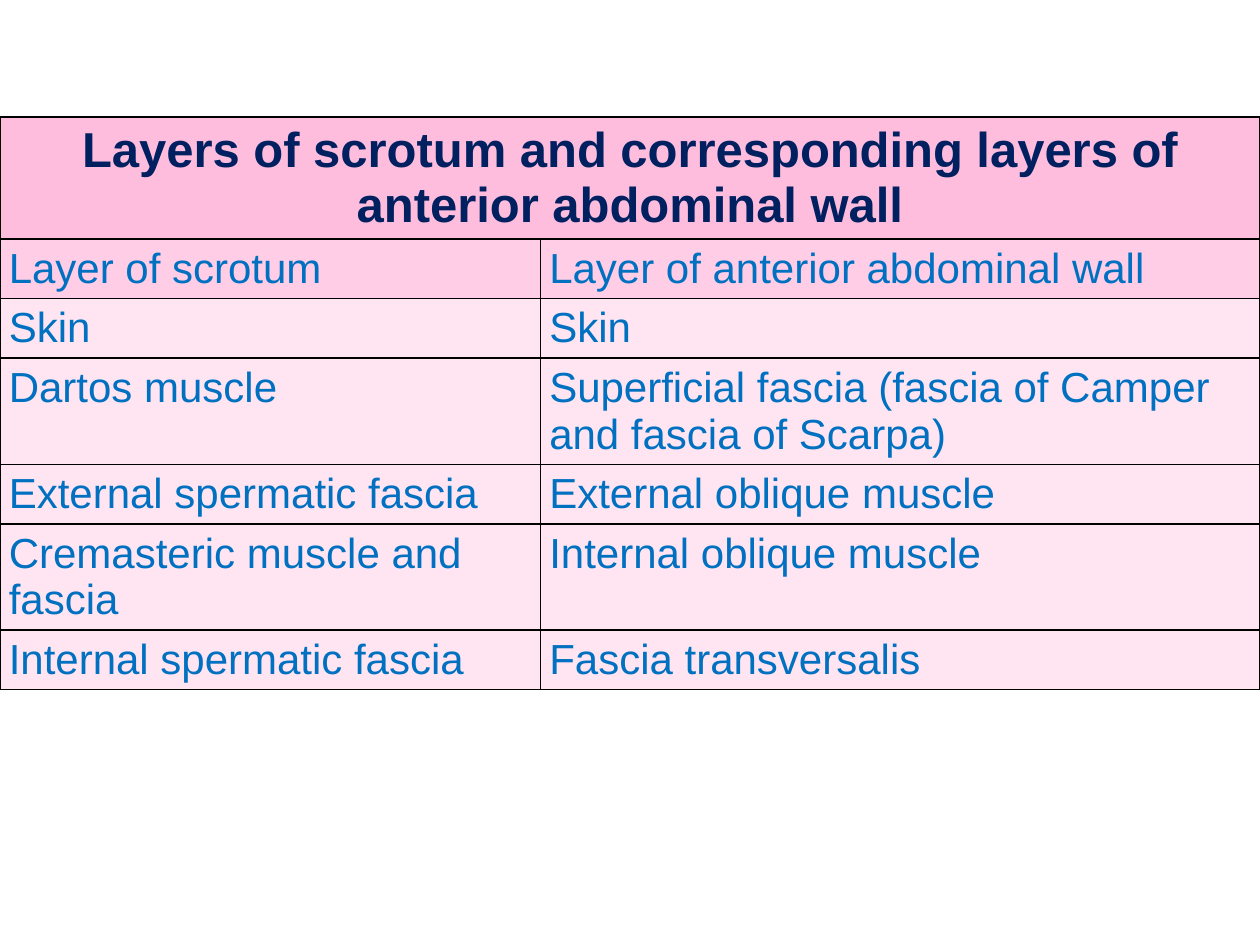
from lxml import etree
from pptx import Presentation
from pptx import util as u
from pptx.dml.color import RGBColor
from pptx.enum import text
from pptx.oxml import ns

NAVY = RGBColor(0x00, 0x20, 0x60)
BLUE = RGBColor(0x00, 0x70, 0xC0)
BLACK = RGBColor(0x00, 0x00, 0x00)
PINK = RGBColor(0xFF, 0xBD, 0xDE)
MID_PINK = RGBColor(0xFF, 0xCD, 0xE6)
PALE_PINK = RGBColor(0xFF, 0xE5, 0xF2)

HEADING = "Layers of scrotum and corresponding layers of anterior abdominal wall"
LAYERS = [
    ("Layer of scrotum", "Layer of anterior abdominal wall"),
    ("Skin", "Skin"),
    ("Dartos muscle", "Superficial fascia (fascia of Camper and fascia of Scarpa)"),
    ("External spermatic fascia", "External oblique muscle"),
    ("Cremasteric muscle and fascia", "Internal oblique muscle"),
    ("Internal spermatic fascia", "Fascia transversalis"),
]
COLUMN_WIDTHS = [4.29, 5.71]
ROW_HEIGHTS = [0.96, 0.47, 0.47, 0.84, 0.47, 0.84, 0.47]


class SlideBuilder:
    font = "Arial"
    border_width = u.Pt(1)

    def __init__(self, s):
        self.s = s

    def borders(self, cell):
        tc_pr = cell._tc.get_or_add_tcPr()
        for i, side in enumerate(("a:lnL", "a:lnR", "a:lnT", "a:lnB")):
            ln = etree.Element(ns.qn(side), w=str(self.border_width))
            fill = etree.SubElement(ln, ns.qn("a:solidFill"))
            etree.SubElement(fill, ns.qn("a:srgbClr"), val=str(BLACK))
            tc_pr.insert(i, ln)

    def cell(self, cell, content, fill, size, color, bold=False, align=text.PP_ALIGN.LEFT):
        cell.margin_left = cell.margin_right = u.Inches(0.07)
        cell.margin_top = cell.margin_bottom = u.Inches(0.05)
        cell.fill.solid()
        cell.fill.fore_color.rgb = fill
        p = cell.text_frame.paragraphs[0]
        p.text = content
        p.alignment = align
        for r in p.runs:
            r.font.name = self.font
            r.font.size = u.Pt(size)
            r.font.bold = bold
            r.font.color.rgb = color

    def table(self, left, top, widths, heights, heading, rows):
        frame = self.s.shapes.add_table(
            len(heights), len(widths), u.Inches(left), u.Inches(top),
            u.Inches(sum(widths)), u.Inches(sum(heights)))
        tbl = frame.table
        tbl.horz_banding = False
        for column, width in zip(tbl.columns, widths):
            column.width = u.Inches(width)
        for row, height in zip(tbl.rows, heights):
            row.height = u.Inches(height)
        tbl.cell(0, 0).merge(tbl.cell(0, len(widths) - 1))
        self.cell(tbl.cell(0, 0), heading, PINK, 28, NAVY, True, text.PP_ALIGN.CENTER)
        for i, row in enumerate(rows, 1):
            fill = MID_PINK if i == 1 else PALE_PINK
            for j, content in enumerate(row):
                self.cell(tbl.cell(i, j), content, fill, 24, BLUE)
        for cell in tbl.iter_cells():
            self.borders(cell)


def main():
    prs = Presentation()
    prs.slide_width, prs.slide_height = u.Inches(10), u.Inches(7.5)
    builder = SlideBuilder(prs.slides.add_slide(prs.slide_layouts[6]))
    builder.table(0, 0.93, COLUMN_WIDTHS, ROW_HEIGHTS, HEADING, LAYERS)
    prs.save("out.pptx")


if __name__ == "__main__":
    main()
